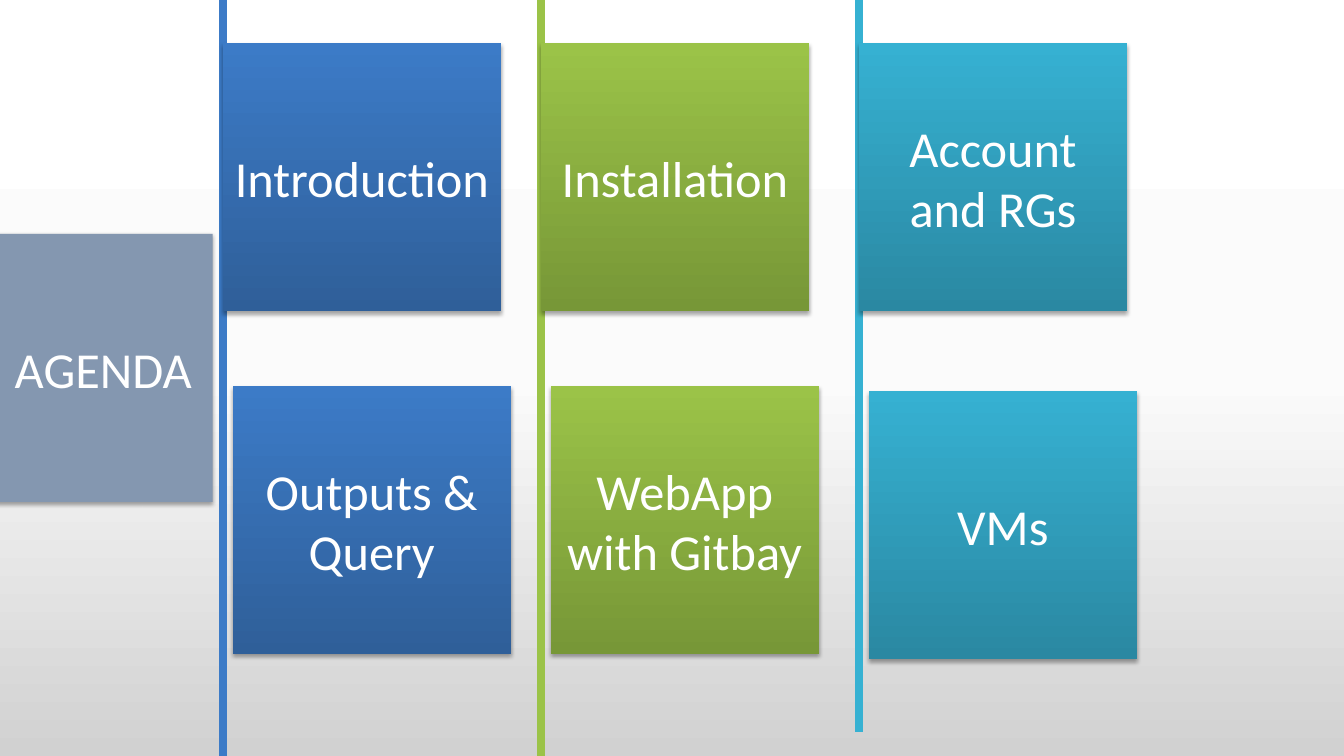
import copy
from dataclasses import dataclass

import lxml.etree
import pptx
import pptx.dml.color
import pptx.dml.fill
import pptx.enum.shapes
import pptx.enum.text
import pptx.oxml
import pptx.oxml.ns
import pptx.shapes.autoshape
import pptx.slide
import pptx.util

Pt = pptx.util.Pt
RGBColor = pptx.dml.color.RGBColor

WHITE = RGBColor(0xFF, 0xFF, 0xFF)
OFF_WHITE = RGBColor(0xFB, 0xFB, 0xFB)
GREY = RGBColor(0xD1, 0xD1, 0xD1)
SLATE = RGBColor(0x84, 0x97, 0xB0)
BLUE = RGBColor(0x3C, 0x7B, 0xC7)
DARK_BLUE = RGBColor(0x2F, 0x5F, 0x99)
GREEN = RGBColor(0x9B, 0xC3, 0x48)
DARK_GREEN = RGBColor(0x77, 0x97, 0x37)
TEAL = RGBColor(0x36, 0xB1, 0xD2)
DARK_TEAL = RGBColor(0x2A, 0x88, 0xA2)

PAGE_WIDTH, PAGE_HEIGHT = 960, 540
FIRST_RAIL, RAIL_PITCH = 159.2, 227.2
TILE_HEIGHT = 191.5
UPPER_TOP = 31
LOWER_INDENT = 7

SHADOW = (
    f'<a:outerShdw {pptx.oxml.ns.nsdecls("a")} blurRad="{Pt(3.1)}" dist="{Pt(1.8)}" '
    'dir="5400000" rotWithShape="0"><a:srgbClr val="000000">'
    '<a:alpha val="35000"/></a:srgbClr></a:outerShdw>'
)


@dataclass(frozen=True)
class Column:
    upper: str
    lower: str
    light: RGBColor
    dark: RGBColor
    tile_width: float = TILE_HEIGHT
    lower_top: float = 275.8
    rail_top: float = 0


COLUMNS = [
    Column("Introduction", "Outputs & Query", BLUE, DARK_BLUE, tile_width=198.7),
    Column("Installation", "WebApp with Gitbay", GREEN, DARK_GREEN),
    Column("Account and RGs", "VMs", TEAL, DARK_TEAL, lower_top=279.4, rail_top=-17.3),
]


def set_gradient(fill: pptx.dml.fill.FillFormat, angle: float, colors: list[RGBColor]) -> None:
    """Colour the existing stops in order; the angle runs counter-clockwise."""
    fill.gradient_angle = angle
    for stop, color in zip(fill.gradient_stops, colors):
        stop.color.rgb = color


def paint_background(page: pptx.slide.Slide) -> None:
    fill = page.background.fill
    fill.gradient()
    first = page.element.find(".//" + pptx.oxml.ns.qn("a:gs"))
    first.addnext(copy.deepcopy(first))
    for stop, position in zip(fill.gradient_stops, (0, 0.5, 1)):
        stop.position = position
    set_gradient(fill, 270, [WHITE, OFF_WHITE, GREY])


def format_tile(tile: pptx.shapes.autoshape.Shape, label: str) -> None:
    """Give a tile its label, drop shadow and borderless edge."""
    tile.line.fill.background()
    tile.shadow.inherit = False
    effects = tile.element.spPr.find(pptx.oxml.ns.qn("a:effectLst"))
    effects.append(pptx.oxml.parse_xml(SHADOW))
    frame = tile.text_frame
    frame.text = label
    frame.word_wrap = True
    frame.auto_size = pptx.enum.text.MSO_AUTO_SIZE.NONE
    frame.vertical_anchor = pptx.enum.text.MSO_ANCHOR.MIDDLE
    para = frame.paragraphs[0]
    para.alignment = pptx.enum.text.PP_ALIGN.CENTER
    font = para.runs[0].font
    font.name, font.size = "Calibri", Pt(36)
    font.color.rgb = WHITE


def add_rail(page: pptx.slide.Slide, left: float, top: float, color: RGBColor) -> None:
    rail = page.shapes.add_connector(
        pptx.enum.shapes.MSO_CONNECTOR.STRAIGHT,
        Pt(left), Pt(top), Pt(left), Pt(top + PAGE_HEIGHT),
    )
    rail.line.width = Pt(6)
    rail.line.color.rgb = color
    lxml.etree.SubElement(rail.element.spPr, pptx.oxml.ns.qn("a:effectLst"))


def add_column(page: pptx.slide.Slide, column: Column, left: float) -> None:
    add_rail(page, left, column.rail_top, column.light)
    for label, tile_left, top in (
        (column.upper, left, UPPER_TOP),
        (column.lower, left + LOWER_INDENT, column.lower_top),
    ):
        tile = page.shapes.add_shape(
            pptx.enum.shapes.MSO_SHAPE.RECTANGLE,
            Pt(tile_left), Pt(top), Pt(column.tile_width), Pt(TILE_HEIGHT),
        )
        tile.fill.gradient()
        set_gradient(tile.fill, 90, [column.dark, column.light])
        format_tile(tile, label)


def add_title(page: pptx.slide.Slide) -> None:
    title = page.shapes.title
    title.left, title.top = Pt(-4.3), Pt(167)
    title.width, title.height = Pt(156.2), Pt(TILE_HEIGHT)
    title.fill.solid()
    title.fill.fore_color.rgb = SLATE
    format_tile(title, "AGENDA")


def main() -> None:
    deck = pptx.Presentation()
    deck.slide_width, deck.slide_height = Pt(PAGE_WIDTH), Pt(PAGE_HEIGHT)
    page = deck.slides.add_slide(deck.slide_layouts.get_by_name("Title Only"))
    paint_background(page)
    add_title(page)
    for index, column in enumerate(COLUMNS):
        add_column(page, column, FIRST_RAIL + index * RAIL_PITCH)
    deck.save("out.pptx")


if __name__ == "__main__":
    main()
